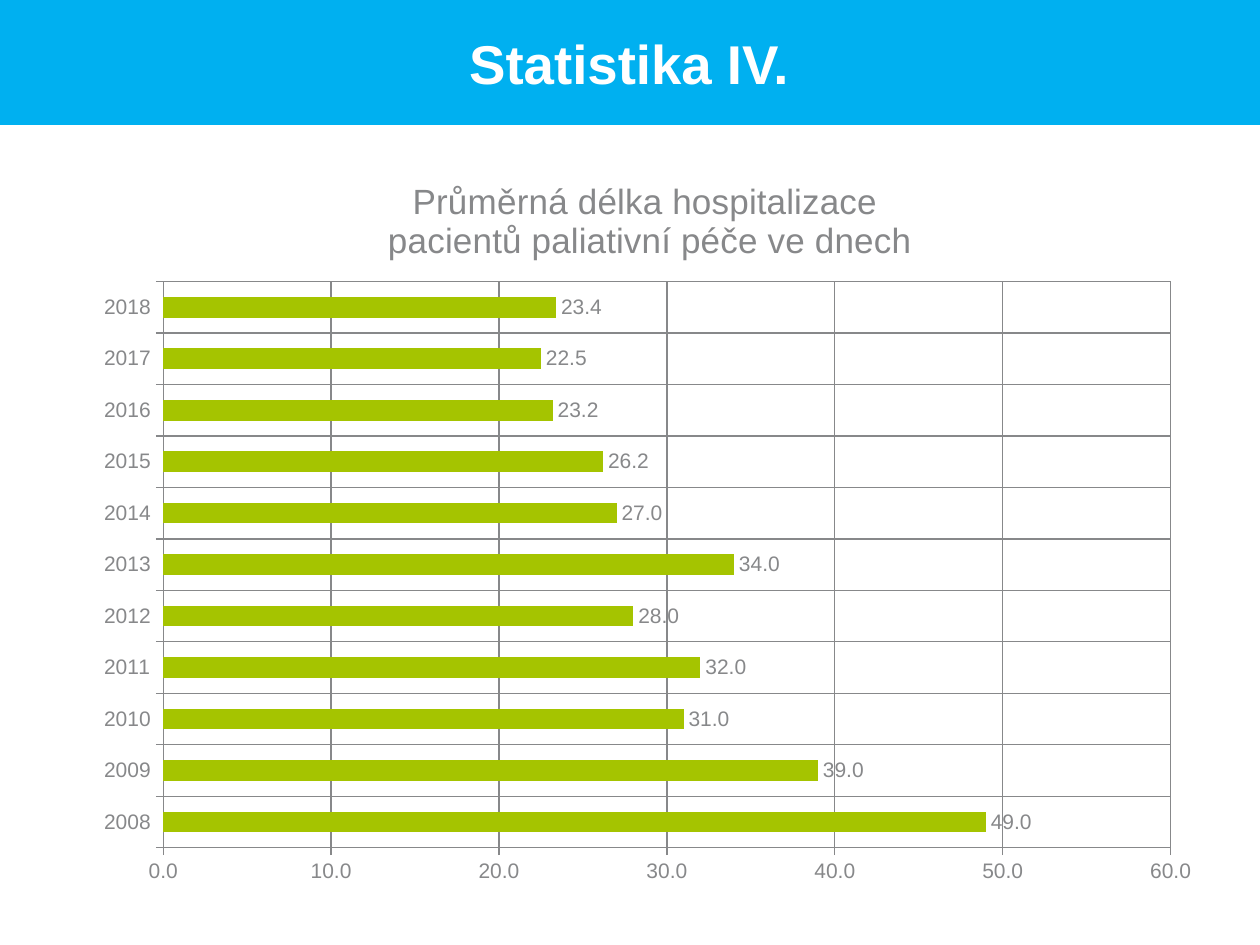
from pptx import Presentation
from pptx import util as u
from pptx.chart import data
from pptx.dml import color
from pptx.enum import chart as charts, text
from pptx.oxml import parse_xml
from pptx.oxml.ns import nsdecls, qn

SCALE = 914400 / 126
COLORS = {"banner": "00B0F0", "white": "FFFFFF", "bar": "A5C400", "gray": "87888A"}
TITLE_LINES = ["Průměrná délka hospitalizace ", "pacientů paliativní péče ve dnech"]
YEARS = [str(year) for year in range(2008, 2019)]
DAYS = [49, 39, 31, 32, 28, 34, 27, 26.2, 23.2, 22.5, 23.4]


def px(*lengths):
    return [u.Emu(round(length * SCALE)) for length in lengths]


def rgb(name):
    return color.RGBColor.from_string(COLORS[name])


def set_font(font, size, name, bold=False):
    font.name = "Arial"
    font.size = u.Pt(size)
    font.bold = bold
    font.color.rgb = rgb(name)


def add_banner(page, words):
    box = page.shapes.title
    box.left, box.top, box.width, box.height = px(-2, 0, 1262, 125)
    box.fill.solid()
    box.fill.fore_color.rgb = rgb("banner")
    box.text_frame.text = words
    box.text_frame.vertical_anchor = text.MSO_ANCHOR.MIDDLE
    para = box.text_frame.paragraphs[0]
    para.alignment = text.PP_ALIGN.CENTER
    set_font(para.font, 31.2, "white", True)


def set_chart_title(chart, lines):
    chart.has_title = True
    frame = chart.chart_title.text_frame
    frame.text = "\n".join(lines)
    for para in frame.paragraphs:
        set_font(para.font, 20, "gray")
    chart.chart_title.include_in_layout = False


def format_axis(axis):
    axis.has_major_gridlines = True
    axis.major_tick_mark = charts.XL_TICK_MARK.OUTSIDE
    axis.minor_tick_mark = charts.XL_TICK_MARK.NONE
    set_font(axis.tick_labels.font, 12, "gray")
    for line in (axis.format.line, axis.major_gridlines.format.line):
        line.color.rgb = rgb("gray")
        line.width = u.Pt(0.75)


def set_plot_layout(chart, x, y, w, h):
    area = chart.element.find(".//" + qn("c:plotArea"))
    for old in area.findall(qn("c:layout")):
        area.remove(old)
    sizes = "".join(
        f'<c:{tag} val="{value}"/>' for tag, value in zip("xywh", (x, y, w, h))
    )
    area.insert(0, parse_xml(
        f'<c:layout {nsdecls("c")}><c:manualLayout><c:layoutTarget val="inner"/>'
        f'<c:xMode val="edge"/><c:yMode val="edge"/>{sizes}</c:manualLayout></c:layout>'
    ))


def add_bar_chart(page):
    values = data.CategoryChartData(number_format="0.0")
    values.categories = YEARS
    values.add_series("Series 1", DAYS)
    chart = page.shapes.add_chart(
        charts.XL_CHART_TYPE.BAR_CLUSTERED, *px(84, 155, 1132, 745), values
    ).chart
    chart.has_legend = False
    chart.font.name = "Calibri"
    chart.font.size = u.Pt(18)
    set_chart_title(chart, TITLE_LINES)
    for axis in (chart.category_axis, chart.value_axis):
        format_axis(axis)
    axis = chart.value_axis
    axis.minimum_scale, axis.maximum_scale, axis.major_unit = 0, 60, 10
    axis.tick_labels.number_format = "0.0"
    axis.tick_labels.number_format_is_linked = False

    plot = chart.plots[0]
    plot.gap_width = 150
    plot.vary_by_categories = False
    series = plot.series[0]
    series.format.fill.solid()
    series.format.fill.fore_color.rgb = rgb("bar")
    labels = series.data_labels
    labels.show_value = True
    labels.number_format = "0.0"
    labels.number_format_is_linked = False
    labels.position = charts.XL_LABEL_POSITION.OUTSIDE_END
    set_font(labels.font, 12, "gray")
    set_plot_layout(chart, 0.07, 0.17, 0.89, 0.76)


def main():
    deck = Presentation()
    deck.slide_width, deck.slide_height = px(1260, 945)
    page = deck.slides.add_slide(deck.slide_layouts[5])
    add_banner(page, "Statistika IV.")
    add_bar_chart(page)
    deck.save("out.pptx")


if __name__ == "__main__":
    main()
